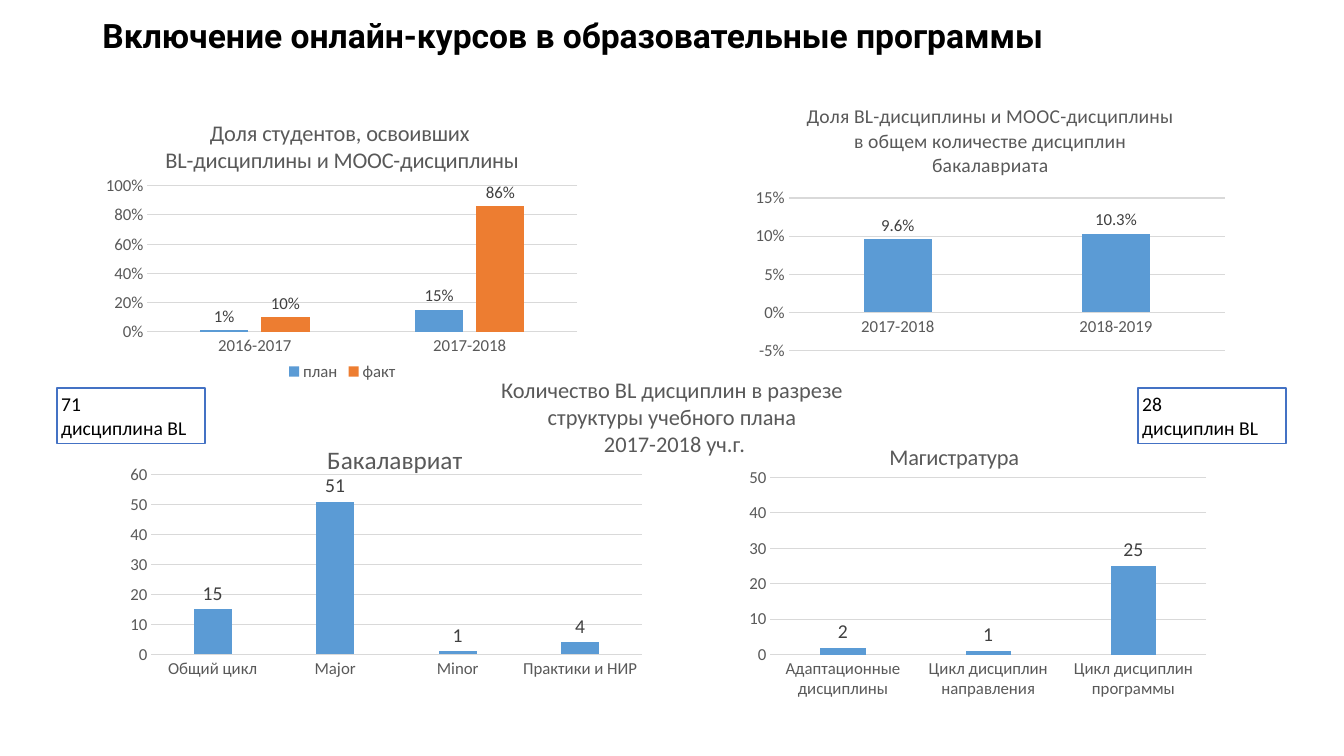
from lxml import etree
from pptx import Presentation, util as u
from pptx.chart.data import CategoryChartData
from pptx.dml.color import RGBColor
from pptx.enum import chart as ch, shapes, text
from pptx.oxml.ns import qn

COLORS = {"ink": "000000", "grey": "595959", "label": "404040", "grid": "D9D9D9",
          "plan": "5B9BD5", "fact": "ED7D31", "border": "4472C4", "paper": "FFFFFF"}

deck = Presentation()
deck.slide_width, deck.slide_height = u.Inches(13.33), u.Inches(7.5)
COL, ROW = deck.slide_width / 160, deck.slide_height / 90
slide = deck.slides.add_slide(deck.slide_layouts[5])


def write(frame, words, size=16, color="grey", face="Calibri", bold=False,
          align=None, spacing=None):
    frame.text = words
    for line in frame.paragraphs:
        line.alignment, line.line_spacing = align, spacing
        for run in line.runs:
            run.font.size, run.font.name, run.font.bold = u.Pt(size), face, bold
            run.font.color.rgb = RGBColor.from_string(COLORS[color])


def place(parent, index, **shares):
    for old in parent.findall(qn("c:layout")):
        parent.remove(old)
    layout = etree.Element(qn("c:layout"))
    manual = etree.SubElement(layout, qn("c:manualLayout"))
    for tag, value in shares.items():
        etree.SubElement(manual, qn("c:" + tag)).set("val", str(value))
    parent.insert(index, layout)


heading = slide.shapes.title
heading.left, heading.top = int(11 * COL), int(1.7 * ROW)
heading.width, heading.height = int(121.2 * COL), int(8.9 * ROW)
heading.text_frame.vertical_anchor = text.MSO_ANCHOR.TOP
heading.text_frame.auto_size = text.MSO_AUTO_SIZE.NONE
write(heading.text_frame, "Включение онлайн-курсов в образовательные программы", size=24,
      color="ink", face="Roboto", bold=True, align=text.PP_ALIGN.LEFT, spacing=0.9)

ONE = "Series 1"
charts = [
    dict(cell=(11, 12.4, 59.5, 33.5), title="Доля студентов, освоивших \nBL-дисциплины и МООС-дисциплины",
         size=16, labels=12, cats=["2016-2017", "2017-2018"],
         series={"план": (0.01, 0.15), "факт": (0.1, 0.86)},
         axis=(0, 1, 0.2), axis_format="0%", label_format="0%",
         plot=(0.11, 0.29, 0.86, 0.52)),
    dict(cell=(88.8, 10.6, 58.2, 33),
         title="Доля BL-дисциплины и МООС-дисциплины\nв общем количестве дисциплин бакалавриата",
         size=14, labels=12, cats=["2017-2018", "2018-2019"], series={ONE: (0.096, 0.103)},
         axis=(-0.05, 0.15, 0.05), axis_format="0%", label_format="0.0%"),
    dict(cell=(88.3, 49.4, 57, 39.1), title="Магистратура", size=16, labels=14,
         cats=["Адаптационные дисциплины", "Цикл дисциплин направления", "Цикл дисциплин программы"],
         series={ONE: (2, 1, 25)}, axis=(0, 50, 10), axis_format="General",
         label_format="General", plot=(0.06, 0.19, 0.91, 0.54), title_at=(0.3, 0.07)),
    dict(cell=(11, 49, 70.3, 39.6), title="Бакалавриат", size=18, labels=14,
         cats=["Общий цикл", "Major", "Minor", "Практики и НИР"],
         series={ONE: (15, 51, 1, 4)}, axis=(0, 60, 10), axis_format="General",
         label_format="General", plot=(0.1, 0.19, 0.83, 0.54), title_at=(0.39, 0.08)),
]

for facts in charts:
    data = CategoryChartData()
    data.categories = facts["cats"]
    for name, values in facts["series"].items():
        data.add_series(name, values)
    left, top, width, height = facts["cell"]
    chart = slide.shapes.add_chart(
        ch.XL_CHART_TYPE.COLUMN_CLUSTERED, int(left * COL), int(top * ROW),
        int(width * COL), int(height * ROW), data).chart
    chart.font.size, chart.font.name = u.Pt(10), "Calibri"
    write(chart.chart_title.text_frame, facts["title"], size=facts["size"])
    chart.chart_title.include_in_layout = False
    if "title_at" in facts:
        x, y = facts["title_at"]
        place(chart.chart_title.element if hasattr(chart.chart_title, "element")
              else chart.element.find(".//" + qn("c:title")), 1,
              xMode="edge", yMode="edge", x=x, y=y)
    if "plot" in facts:
        x, y, w, h = facts["plot"]
        place(chart.element.find(".//" + qn("c:plotArea")), 0, layoutTarget="inner",
              xMode="edge", yMode="edge", x=x, y=y, w=w, h=h)

    amounts = chart.value_axis
    amounts.minimum_scale, amounts.maximum_scale, amounts.major_unit = facts["axis"]
    amounts.tick_labels.number_format = facts["axis_format"]
    amounts.tick_labels.number_format_is_linked = False
    amounts.format.line.fill.background()
    for axis in (chart.category_axis, amounts):
        axis.major_tick_mark = axis.minor_tick_mark = ch.XL_TICK_MARK.NONE
        axis.tick_labels.font.size, axis.tick_labels.font.name = u.Pt(12), "Calibri"
        axis.tick_labels.font.color.rgb = RGBColor.from_string(COLORS["grey"])
    for line in (chart.category_axis.format.line, amounts.major_gridlines.format.line):
        line.width = u.Pt(0.75)
        line.color.rgb = RGBColor.from_string(COLORS["grid"])

    columns = chart.plots[0]
    columns.gap_width, columns.overlap, columns.vary_by_categories = 219, -27, False
    for series, color in zip(columns.series, ("plan", "fact")):
        series.format.fill.solid()
        series.format.fill.fore_color.rgb = RGBColor.from_string(COLORS[color])
        labels = series.data_labels
        labels.show_value, labels.position = True, ch.XL_LABEL_POSITION.OUTSIDE_END
        labels.number_format, labels.number_format_is_linked = facts["label_format"], False
        labels.font.size, labels.font.name = u.Pt(facts["labels"]), "Calibri"
        labels.font.color.rgb = RGBColor.from_string(COLORS["label"])

    chart.has_legend = len(facts["series"]) > 1
    if chart.has_legend:
        chart.legend.position = ch.XL_LEGEND_POSITION.BOTTOM
        chart.legend.include_in_layout = False
        chart.legend.font.size, chart.legend.font.name = u.Pt(12), "Calibri"
        chart.legend.font.color.rgb = RGBColor.from_string(COLORS["grey"])

structure = slide.shapes.add_textbox(int(55 * COL), int(44.2 * ROW), int(50 * COL), int(10.7 * ROW))
write(structure.text_frame,
      "Количество BL дисциплин в разрезе структуры учебного плана\n 2017-2018 уч.г.",
      align=text.PP_ALIGN.CENTER)
framed = [structure]

for left, total in ((6.8, "71\nдисциплина BL"), (135.5, "28\nдисциплин BL")):
    count = slide.shapes.add_shape(shapes.MSO_SHAPE.RECTANGLE, int(left * COL), int(46.2 * ROW),
                                   int(17.6 * COL), int(6.6 * ROW))
    count.shadow.inherit = False
    count.fill.solid()
    count.fill.fore_color.rgb = RGBColor.from_string(COLORS["paper"])
    count.line.color.rgb = RGBColor.from_string(COLORS["border"])
    count.line.width = u.Pt(1)
    write(count.text_frame, total, size=14, color="ink", align=text.PP_ALIGN.LEFT)
    framed.append(count)

for box in framed:
    frame = box.text_frame
    frame.word_wrap, frame.vertical_anchor = True, text.MSO_ANCHOR.MIDDLE
    frame.auto_size = text.MSO_AUTO_SIZE.SHAPE_TO_FIT_TEXT
    frame.margin_left = frame.margin_right = frame.margin_top = frame.margin_bottom = u.Inches(0.04)

deck.save("out.pptx")
